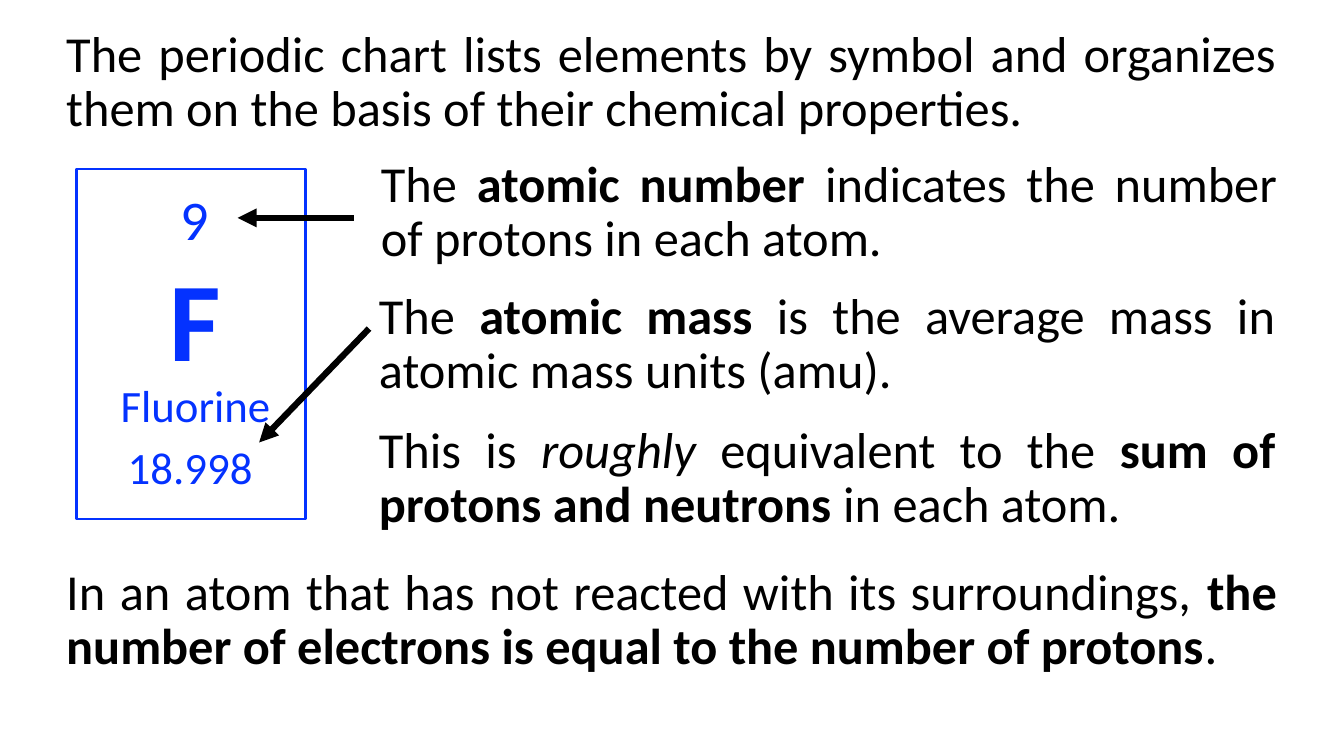
import pptx
import pptx.util
import pptx.dml.color
import pptx.enum.shapes
import pptx.enum.text
import lxml.etree
from pptx.oxml.ns import qn

Cm = pptx.util.Cm
Pt = pptx.util.Pt
BLACK = "000000"
BLUE = "0432FF"


def color(value):
    return pptx.dml.color.RGBColor.from_string(value)


def add_text(text, left, top, width, height, size=36, ink=BLACK, bold=False, body=False):
    box = slide.shapes.add_textbox(Cm(left), Cm(top), Cm(width), Cm(height))
    frame = box.text_frame
    frame.word_wrap = True
    para = frame.paragraphs[0]
    if body:
        frame.vertical_anchor = pptx.enum.text.MSO_ANCHOR.MIDDLE
        para.alignment = pptx.enum.text.PP_ALIGN.JUSTIFY
        para.line_spacing = 0.9
    else:
        frame.auto_size = pptx.enum.text.MSO_AUTO_SIZE.SHAPE_TO_FIT_TEXT
    pieces = [(text, "bold" if bold else "")] if isinstance(text, str) else text
    for words, style in pieces:
        span = para.add_run()
        span.text = words
        span.font.name = "Calibri"
        span.font.size = Pt(size)
        span.font.color.rgb = color(ink)
        span.font.bold = style == "bold"
        span.font.italic = style == "italic"


deck = pptx.Presentation()
deck.slide_width = Cm(33.87)
deck.slide_height = Cm(19.05)
slide = deck.slides.add_slide(deck.slide_layouts[6])

tile = slide.shapes.add_shape(
    pptx.enum.shapes.MSO_SHAPE.RECTANGLE, Cm(1.93), Cm(4.27), Cm(5.77), Cm(8.81))
tile.shadow.inherit = False
tile.fill.background()
tile.line.color.rgb = color(BLUE)
tile.line.width = Pt(1.5)

add_text("F", 4.01, 6.17, 2.26, 3.68, size=80, ink=BLUE, bold=True)
add_text("9", 4.29, 4.52, 1.7, 2.01, size=40, ink=BLUE)
add_text("18.998", 2.97, 10.95, 4.37, 1.63, size=32, ink=BLUE)
add_text("Fluorine", 2.79, 9.4, 4.37, 1.63, size=32, ink=BLUE)

arrows = [
    (8.92, 5.49, 5.99, 5.49),
    (9.3, 8.28, 6.53, 11.15),
]
for ends in arrows:
    arrow = slide.shapes.add_connector(
        pptx.enum.shapes.MSO_CONNECTOR.STRAIGHT, *[Cm(end) for end in ends])
    arrow.line.color.rgb = color(BLACK)
    arrow.line.width = Pt(4.5)
    line = arrow.line._get_or_add_ln()
    lxml.etree.SubElement(line, qn("a:tailEnd"), type="triangle")
    lxml.etree.SubElement(arrow._element.spPr, qn("a:effectLst"))

statements = [
    (1.42, 0.51, 31.01, [
        ("The periodic chart lists elements by symbol and organizes "
         "them on the basis of their chemical properties.", "")]),
    (9.35, 3.78, 23.09, [
        ("The ", ""), ("atomic number ", "bold"),
        ("indicates the number of protons in each atom.", "")]),
    (9.3, 7.11, 23.09, [
        ("The ", ""), ("atomic mass ", "bold"),
        ("is the average mass in atomic mass units (amu).", "")]),
    (9.3, 10.49, 23.09, [
        ("This is ", ""), ("roughly", "italic"), (" equivalent to the ", ""),
        ("sum of protons and neutrons ", "bold"), ("in each atom.", "")]),
    (1.42, 14.07, 31.01, [
        ("In an atom that has not reacted with its surroundings, ", ""),
        ("the number of electrons is equal to the number of protons", "bold"),
        (".", "")]),
]
for left, top, width, pieces in statements:
    add_text(pieces, left, top, width, 3.18, body=True)

deck.save("out.pptx")
